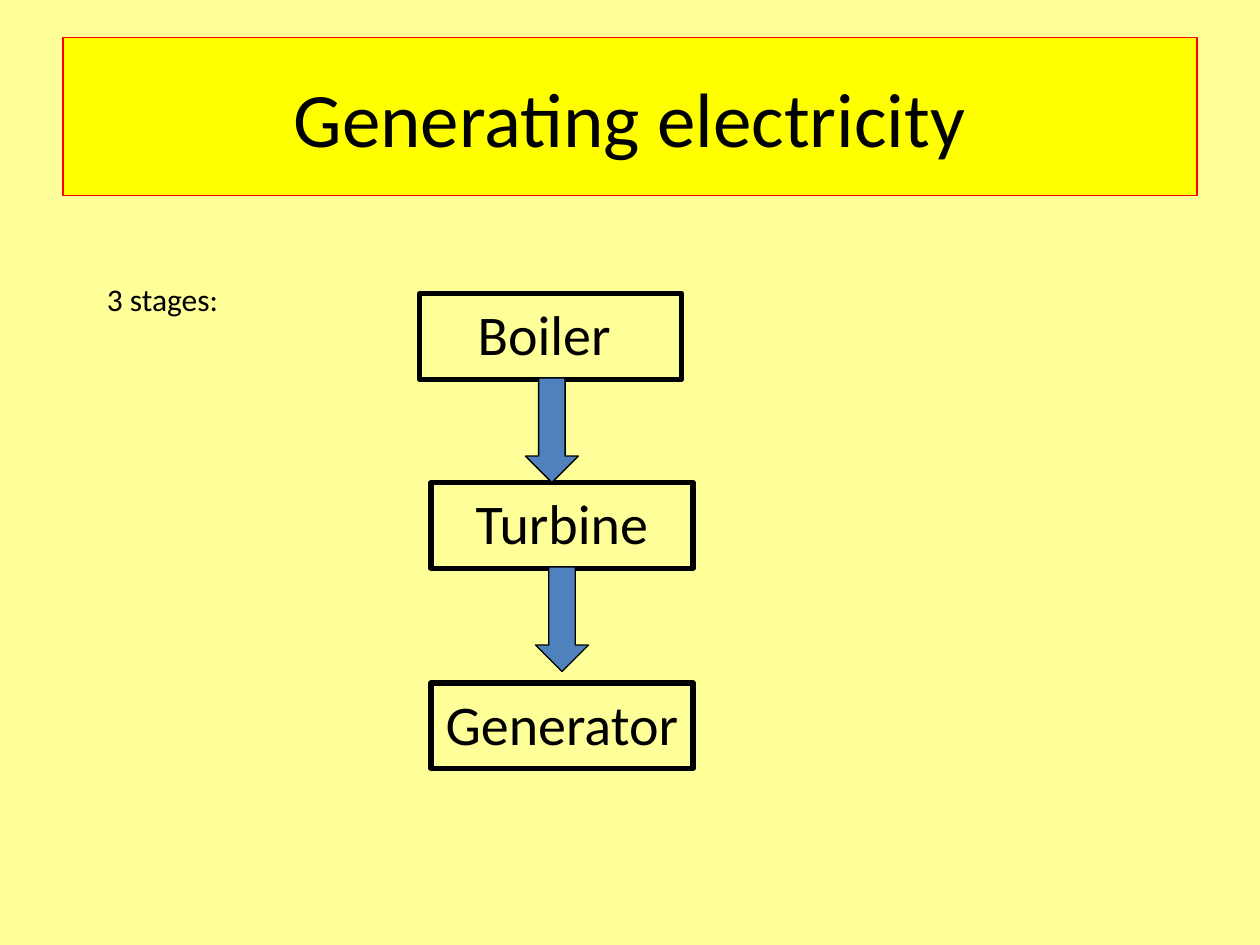
from pptx import Presentation
from pptx.dml.color import RGBColor
from pptx.enum.shapes import MSO_SHAPE
from pptx.enum.text import MSO_ANCHOR, PP_ALIGN
from pptx.util import Inches, Pt

BLACK = "000000"
STAGE_SIZE = (2.08, 0.68)
ARROW_SIZE = (0.42, 0.83)
STAGES = [("Boiler ", 3.33, 2.33), ("Turbine", 3.42, 3.83), ("Generator ", 3.42, 5.42)]
ARROWS = [(4.17, 3), (4.25, 4.5)]


def color(hex_string):
    return RGBColor.from_string(hex_string)


def place(shape, left, top, width, height):
    box = {"left": left, "top": top, "width": width, "height": height}
    for name, value in box.items():
        setattr(shape, name, Inches(value))


def paint(shape, line, line_width, fill=None):
    if fill:
        shape.fill.solid()
        shape.fill.fore_color.rgb = color(fill)
    else:
        shape.fill.background()
    shape.line.color.rgb = color(line)
    shape.line.width = Pt(line_width)


def write(shape, text, size, align=PP_ALIGN.CENTER, anchor=MSO_ANCHOR.TOP):
    frame = shape.text_frame
    frame.word_wrap = True
    frame.vertical_anchor = anchor
    paragraph = frame.paragraphs[0]
    paragraph.alignment = align
    run = paragraph.add_run()
    run.text = text
    for name, value in {"name": "Calibri", "size": Pt(size)}.items():
        setattr(run.font, name, value)
    run.font.color.rgb = color(BLACK)


def add_title(slide, text):
    title = slide.shapes.title
    place(title, 0.5, 0.3, 9, 1.25)
    paint(title, "FF0000", 0.75, "FFFF00")
    write(title, text, 44, anchor=MSO_ANCHOR.MIDDLE)


def add_label(slide, text, *box):
    label = slide.shapes.add_textbox(*map(Inches, box))
    write(label, text, 18, PP_ALIGN.LEFT)


def add_preset(slide, preset, left, top, size):
    shape = slide.shapes.add_shape(preset, *map(Inches, (left, top, *size)))
    shape.shadow.inherit = False
    return shape


def add_stage(slide, text, left, top):
    stage = add_preset(slide, MSO_SHAPE.RECTANGLE, left, top, STAGE_SIZE)
    paint(stage, BLACK, 3)
    write(stage, text, 32)


def add_arrow(slide, left, top):
    arrow = add_preset(slide, MSO_SHAPE.DOWN_ARROW, left, top, ARROW_SIZE)
    paint(arrow, BLACK, 0.75, "4F81BD")


def main():
    presentation = Presentation()
    presentation.slide_width = Inches(10)
    presentation.slide_height = Inches(7.5)
    slide = presentation.slides.add_slide(presentation.slide_layouts.get_by_name("Title Only"))
    slide.background.fill.solid()
    slide.background.fill.fore_color.rgb = color("FFFF99")

    add_title(slide, "Generating electricity")
    add_label(slide, "3 stages:", 0.75, 2.17, 1.5, 0.5)
    for stage in STAGES:
        add_stage(slide, *stage)
    for arrow in ARROWS:
        add_arrow(slide, *arrow)
    presentation.save("out.pptx")


if __name__ == "__main__":
    main()
